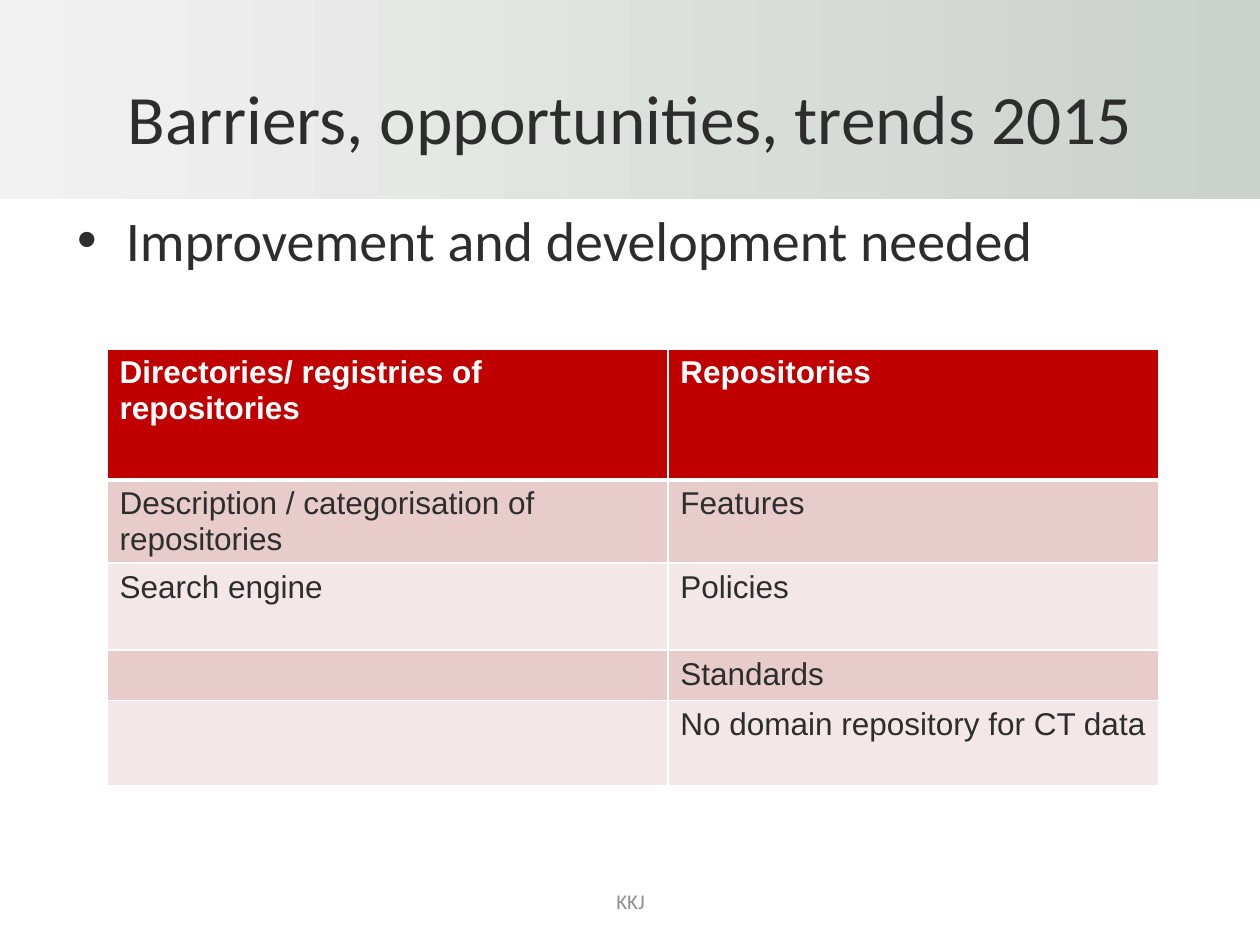
from lxml import etree
from pptx import Presentation
from pptx.dml.color import RGBColor
from pptx.enum.shapes import MSO_SHAPE
from pptx.enum.text import MSO_ANCHOR, MSO_AUTO_SIZE, PP_ALIGN
from pptx.oxml.ns import qn
from pptx.util import Inches, Pt

RECTANGLE = MSO_SHAPE.RECTANGLE
TOP, MIDDLE = MSO_ANCHOR.TOP, MSO_ANCHOR.MIDDLE
LEFT, CENTER = PP_ALIGN.LEFT, PP_ALIGN.CENTER
NO_FIT = MSO_AUTO_SIZE.NONE
TITLE_ONLY = 5

TITLE = "Barriers, opportunities, trends 2015"
BULLET = "Improvement and development needed"
FOOTER = "KKJ"
ROWS = [
    ("Directories/ registries of repositories", "Repositories"),
    ("Description / categorisation of repositories", "Features"),
    ("Search engine", "Policies"),
    ("", "Standards"),
    ("", "No domain repository for CT data"),
]
COLUMN_WIDTHS = [4.45, 3.9]
ROW_HEIGHTS = [1.04, 0.66, 0.69, 0.4, 0.68]

PLACES = {
    "band": (0, 0, 10, 1.58),
    "title": (0.5, 0.3, 9, 1.25),
    "bullet": (0.52, 1.58, 9, 4.95),
    "footer": (3.42, 6.95, 3.17, 0.4),
    "table": (0.85, 2.77, sum(COLUMN_WIDTHS), sum(ROW_HEIGHTS)),
}

THEME = {
    "band": ("F2F2F2", "CBD1CC"),
    "header_fill": "C00000",
    "row_fills": ("E8CCCC", "F4E7E7"),
    "border": "FFFFFF",
    "title": {"name": "Calibri", "size": 39.6, "color": "2D2D2D"},
    "bullet": {"name": "Calibri", "size": 32, "color": "2D2D2D"},
    "footer": {"name": "Calibri", "size": 12, "color": "8F8F8F"},
    "header": {"name": "Arial", "size": 18, "color": "FFFFFF", "bold": True},
    "cell": {"name": "Arial", "size": 18, "color": "2D2D2D", "bold": False},
}


def place(name):
    return [Inches(length) for length in PLACES[name]]


def format_font(font, style):
    for key, value in style.items():
        if key == "color":
            font.color.rgb = RGBColor.from_string(value)
        else:
            setattr(font, key, Pt(value) if key == "size" else value)


def write(frame, text, style, anchor=TOP, align=LEFT):
    for key, value in {"word_wrap": True, "auto_size": NO_FIT, "vertical_anchor": anchor}.items():
        setattr(frame, key, value)
    para = frame.paragraphs[0]
    para.alignment = align
    span = para.add_run()
    span.text = text
    format_font(span.font, THEME[style])
    return para


def add_bullet(para, indent):
    properties = para._p.get_or_add_pPr()
    properties.set("marL", str(Inches(indent)))
    properties.set("indent", str(-Inches(indent)))
    etree.SubElement(properties, qn("a:buFont"), typeface="Arial")
    etree.SubElement(properties, qn("a:buChar"), char="•")


def add_borders(cell, bottom):
    properties = cell._tc.get_or_add_tcPr()
    widths = {"lnL": 1, "lnR": 1, "lnT": 1, "lnB": bottom}
    for index, (side, width) in enumerate(widths.items()):
        line = etree.Element(qn("a:" + side), w=str(Pt(width)))
        fill = etree.SubElement(line, qn("a:solidFill"))
        etree.SubElement(fill, qn("a:srgbClr"), val=THEME["border"])
        properties.insert(index, line)


def add_band(page):
    band = page.shapes.add_shape(RECTANGLE, *place("band"))
    band.shadow.inherit = False
    band.line.fill.background()
    band.fill.gradient()
    band.fill.gradient_angle = 0
    for position, (stop, color) in enumerate(zip(band.fill.gradient_stops, THEME["band"])):
        stop.position = position
        stop.color.rgb = RGBColor.from_string(color)
    page.shapes._spTree.insert(2, band._element)


def add_table(page):
    table = page.shapes.add_table(len(ROWS), len(COLUMN_WIDTHS), *place("table")).table
    for column, width in zip(table.columns, COLUMN_WIDTHS):
        column.width = Inches(width)
    for row, height in zip(table.rows, ROW_HEIGHTS):
        row.height = Inches(height)
    for row, texts in enumerate(ROWS):
        header = row == 0
        color = THEME["header_fill"] if header else THEME["row_fills"][(row - 1) % 2]
        for column, text in enumerate(texts):
            cell = table.cell(row, column)
            cell.fill.solid()
            cell.fill.fore_color.rgb = RGBColor.from_string(color)
            add_borders(cell, 3 if row < 1 else 1)
            para = cell.text_frame.paragraphs[0]
            para.text = text
            format_font(para.runs[0].font if text else para.font, THEME["header" if header else "cell"])


def main():
    deck = Presentation()
    deck.slide_width, deck.slide_height = Inches(10), Inches(7.5)
    page = deck.slides.add_slide(deck.slide_layouts[TITLE_ONLY])
    add_band(page)

    title = page.shapes.title
    title.left, title.top, title.width, title.height = place("title")
    write(title.text_frame, TITLE, "title", MIDDLE, CENTER)

    bullet = page.shapes.add_textbox(*place("bullet"))
    add_bullet(write(bullet.text_frame, BULLET, "bullet"), 0.38)

    footer = page.shapes.add_textbox(*place("footer"))
    write(footer.text_frame, FOOTER, "footer", MIDDLE, CENTER)

    add_table(page)
    deck.save("out.pptx")


if __name__ == "__main__":
    main()
